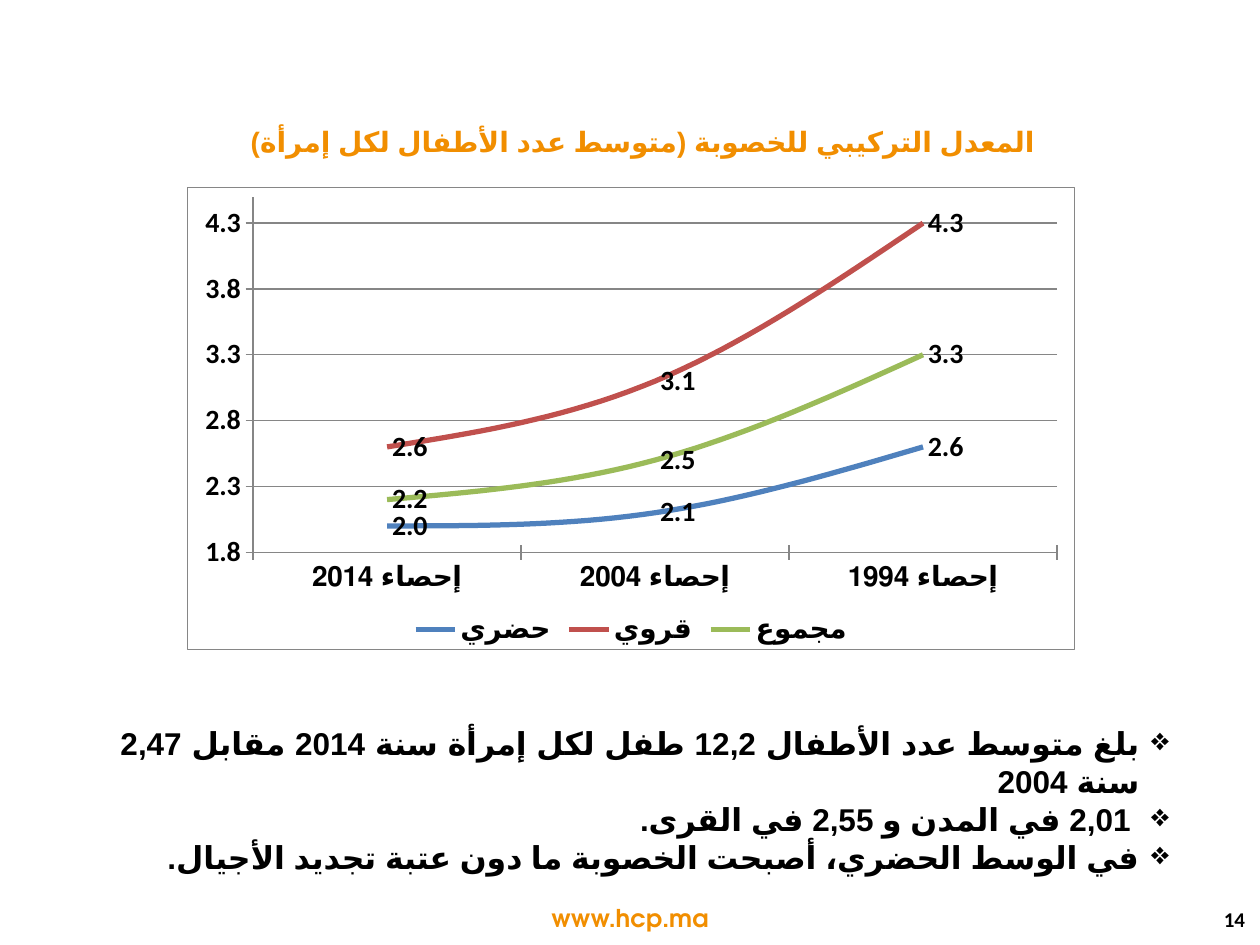
from lxml import etree
from pptx import Presentation
from pptx.chart.data import CategoryChartData
from pptx.dml.color import RGBColor
from pptx.enum.chart import XL_CHART_TYPE, XL_LEGEND_POSITION, XL_TICK_MARK
from pptx.enum.lang import MSO_LANGUAGE_ID
from pptx.enum.text import MSO_ANCHOR, MSO_AUTO_SIZE, PP_ALIGN
from pptx.oxml import parse_xml
from pptx.oxml.ns import nsdecls, qn
from pptx.util import Cm, Pt

CENTER, RIGHT, JUSTIFY = PP_ALIGN.CENTER, PP_ALIGN.RIGHT, PP_ALIGN.JUSTIFY
MIDDLE, TOP = MSO_ANCHOR.MIDDLE, MSO_ANCHOR.TOP
NO_AUTOFIT = MSO_AUTO_SIZE.NONE
ARABIC = MSO_LANGUAGE_ID.ARABIC_MOROCCO
LINE, BOTTOM, CROSS = XL_CHART_TYPE.LINE, XL_LEGEND_POSITION.BOTTOM, XL_TICK_MARK.CROSS
ORANGE, BLACK, GREY = "F18E00", "000000", "868686"


def color(value):
    return RGBColor.from_string(value)


def write(paragraph, text, size, font, ink, align, rtl=False):
    paragraph.alignment = align
    run = paragraph.add_run()
    run.text = text
    run.font.size = Pt(size)
    run.font.bold = True
    run.font.name = font
    run.font.color.rgb = color(ink)
    if rtl:
        paragraph._p.get_or_add_pPr().set("rtl", "1")
        run.font.language_id = ARABIC
        etree.SubElement(run._r.get_or_add_rPr(), qn("a:cs"), typeface=font)


prs = Presentation()
prs.slide_width, prs.slide_height = Cm(25.4), Cm(19.05)
slide = prs.slides.add_slide(prs.slide_layouts[5])

# Heading
title = slide.shapes.title
title.left, title.top, title.width, title.height = Cm(4.09), Cm(2.39), Cm(17.6), Cm(0.94)
title.text_frame.auto_size = NO_AUTOFIT
title.text_frame.vertical_anchor = TOP
write(title.text_frame.paragraphs[0],
      "المعدل التركيبي للخصوبة (متوسط عدد الأطفال لكل إمرأة) ",
      16, "Arial", ORANGE, CENTER, rtl=True)

# Fertility chart
fertility = CategoryChartData(number_format="0.0")
fertility.categories = ["إحصاء 2014", "إحصاء 2004", "إحصاء 1994"]
areas = [
    ("حضري", (2.0, 2.1, 2.6), "4F81BD"),
    ("قروي", (2.6, 3.1, 4.3), "C0504D"),
    ("مجموع", (2.2, 2.5, 3.3), "9BBB59"),
]
for name, rates, _ in areas:
    fertility.add_series(name, rates)
chart = slide.shapes.add_chart(LINE, Cm(3.77), Cm(3.77), Cm(17.91), Cm(9.33), fertility).chart
chart.has_title = False
chart.font.size = Pt(16)
chart.font.bold = True
chart.font.name = "Calibri"
chart.font.color.rgb = color(BLACK)
chart.has_legend = True
chart.legend.position = BOTTOM
chart.legend.include_in_layout = False

for series, (_, _, ink) in zip(chart.plots[0].series, areas):
    series.smooth = True
    series.format.line.color.rgb = color(ink)
    series.format.line.width = Pt(3)
    labels = series.data_labels
    labels.show_value = True
    labels.number_format = "0.0"
    labels.number_format_is_linked = False

rate_axis = chart.value_axis
rate_axis.minimum_scale, rate_axis.maximum_scale, rate_axis.major_unit = 1.8, 4.5, 0.5
rate_axis.tick_labels.number_format = "0.0"
rate_axis.tick_labels.number_format_is_linked = False
rate_axis.has_major_gridlines = True
for axis in (rate_axis, chart.category_axis):
    axis.major_tick_mark = CROSS
for ruled in (rate_axis, chart.category_axis, rate_axis.major_gridlines):
    ruled.format.line.color.rgb = color(GREY)
    ruled.format.line.width = Pt(0.75)

# Chart frame
chart._chartSpace.find(qn("c:chart")).addnext(parse_xml(
    f'<c:spPr {nsdecls("c", "a")}><a:noFill/><a:ln w="9525"><a:solidFill>'
    f'<a:srgbClr val="{GREY}"/></a:solidFill></a:ln></c:spPr>'))

# Findings
findings = [
    ("بلغ متوسط عدد الأطفال 12,2 طفل لكل إمرأة سنة 2014 مقابل 2,47 سنة 2004", JUSTIFY),
    (" 2,01 في المدن و 2,55 في القرى.", JUSTIFY),
    ("في الوسط الحضري، أصبحت الخصوبة ما دون عتبة تجديد الأجيال.", RIGHT),
]
findings_frame = slide.shapes.add_textbox(Cm(2.18), Cm(14.48), Cm(21.64), Cm(3.3)).text_frame
findings_frame.word_wrap = True
for i, (finding, align) in enumerate(findings):
    paragraph = findings_frame.add_paragraph() if i else findings_frame.paragraphs[0]
    properties = paragraph._p.get_or_add_pPr()
    properties.set("marL", str(Cm(0.6)))
    properties.set("indent", str(-Cm(0.6)))
    etree.SubElement(properties, qn("a:buChar"), char="❖")
    write(paragraph, finding, 18, "Arial", BLACK, align, rtl=True)

# Footer: web address and page number
footers = [
    ("www.hcp.ma", 9.7, 6.0, 0.84, 14, "TeX Gyre Adventor", ORANGE, CENTER, TOP),
    ("14", 21.49, 3.86, 0.89, 12, "Calibri", BLACK, RIGHT, MIDDLE),
]
for text, left, width, height, size, font, ink, align, anchor in footers:
    frame = slide.shapes.add_textbox(Cm(left), Cm(18.08), Cm(width), Cm(height)).text_frame
    frame.word_wrap = True
    frame.vertical_anchor = anchor
    write(frame.paragraphs[0], text, size, font, ink, align)

prs.save("out.pptx")
